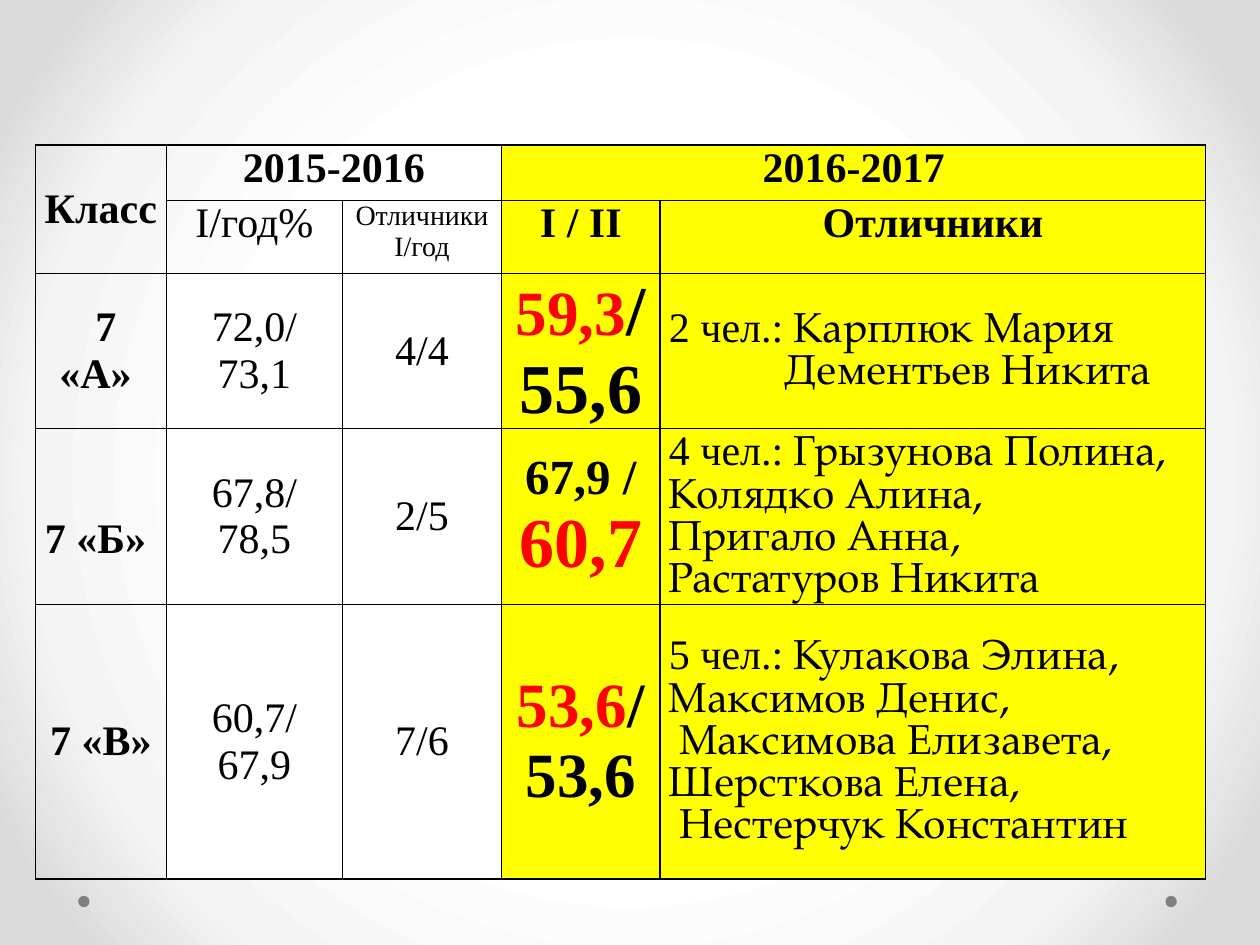
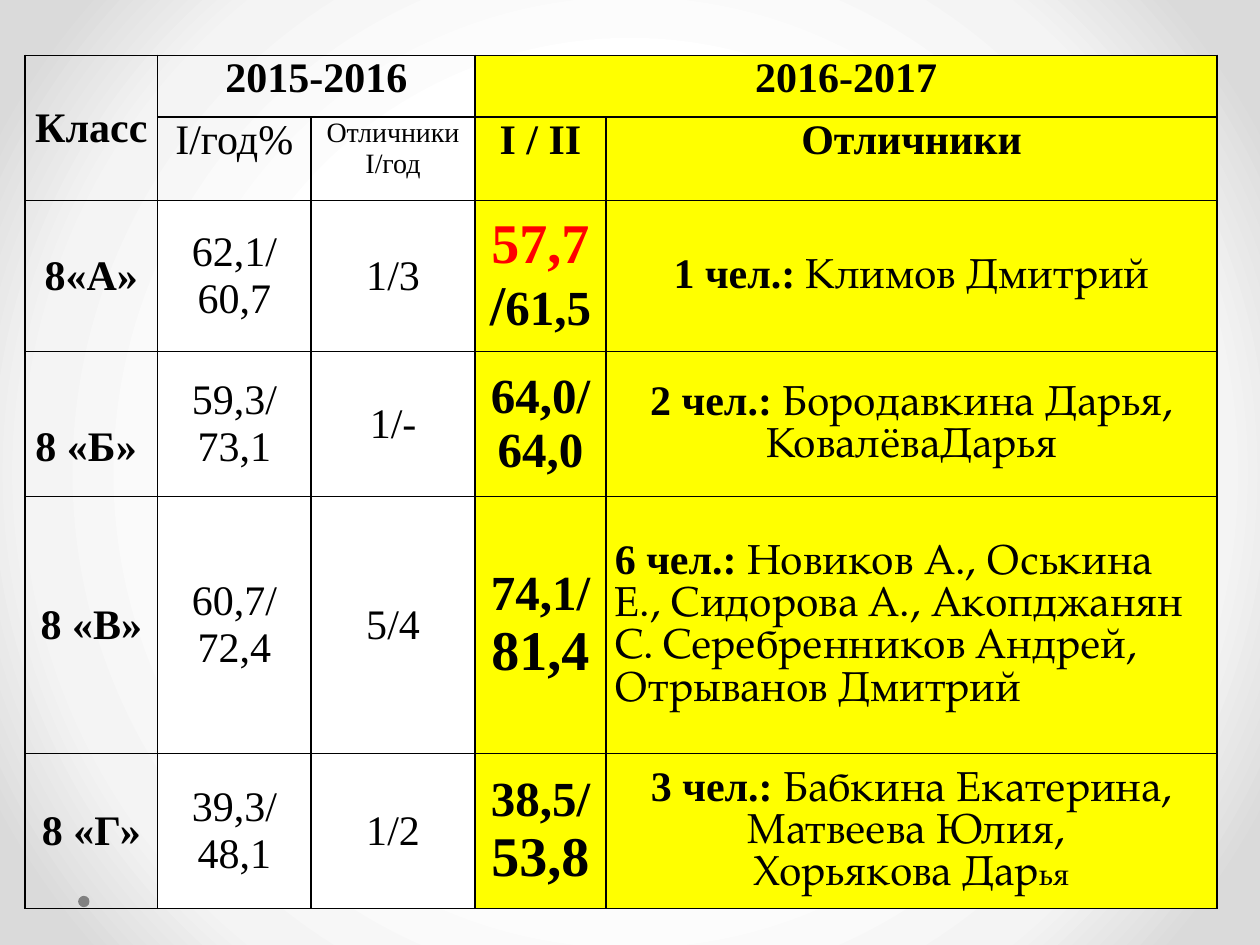
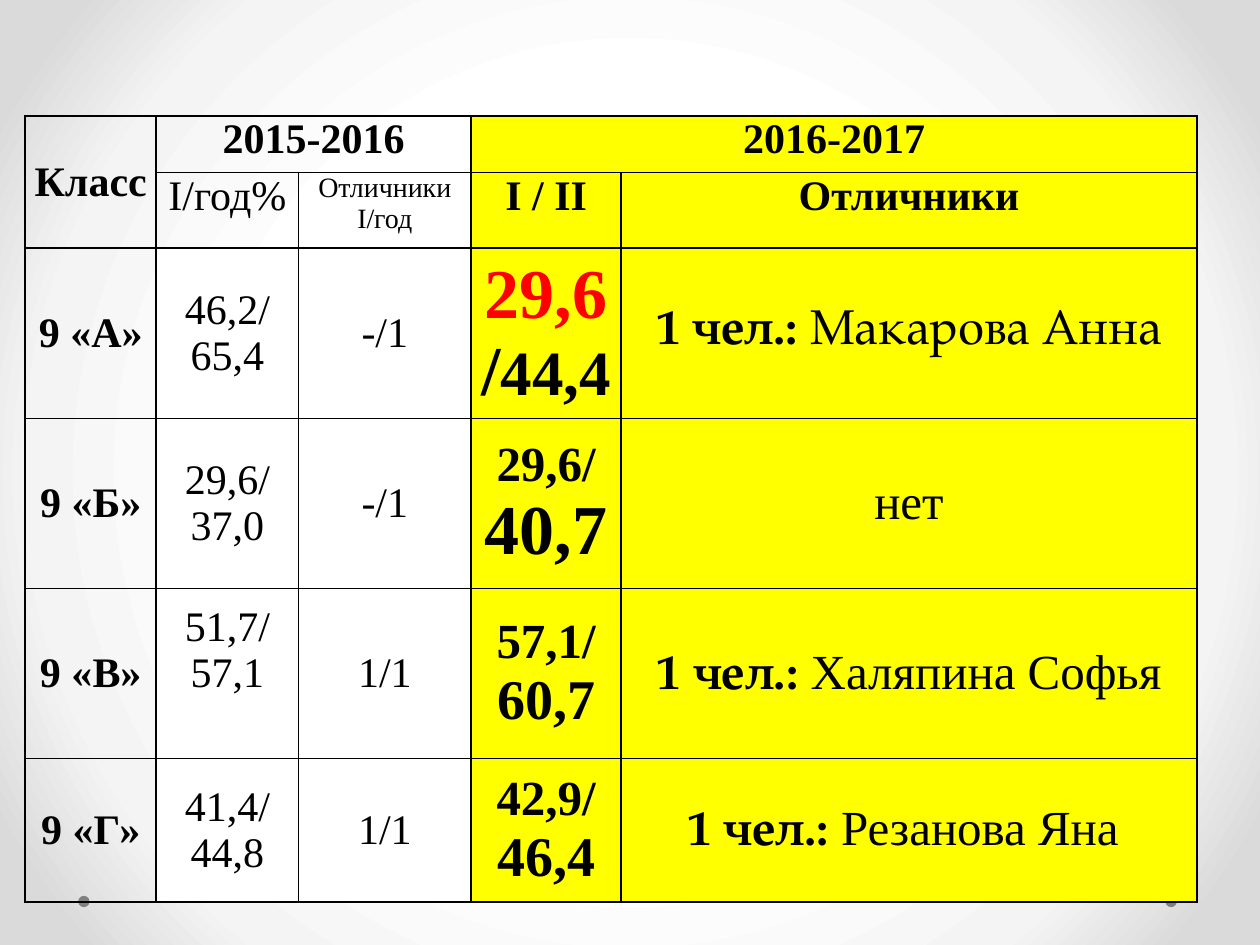
from dataclasses import dataclass

from pptx import Presentation
from pptx.dml.color import RGBColor
from pptx.enum.shapes import MSO_SHAPE
from pptx.enum.text import MSO_ANCHOR, PP_ALIGN
from pptx.oxml import parse_xml
from pptx.oxml.ns import nsdecls
from pptx.util import Inches, Pt


@dataclass(frozen=True)
class Theme:
    serif: str = "Times New Roman"
    names: str = "TeX Gyre Pagella"
    black: str = "000000"
    white: str = "FFFFFF"
    red: str = "FF0000"
    yellow: str = "FFFF00"
    dot: str = "808080"
    backdrop: tuple = ((50, "FFFFFF"), (76, "F4F4F4"), (92, "DADADA"))
    small: int = 16
    tail: int = 18
    text: int = 24
    large: int = 28
    score: int = 32
    score_xl: int = 36
    score_max: int = 40
    border: int = 1
    inset: float = 0.07


T = Theme()
NBSP = chr(160)
LINE = 0.37  # height of one line of table text, inches


@dataclass(frozen=True)
class Run:
    text: str
    size: int = T.text
    bold: bool = False
    color: str = T.black
    font: str = T.serif


@dataclass(frozen=True)
class ClassRow:
    name: str
    rates: tuple
    excellent: str
    scores: list
    pupils: list
    centered: bool = True
    name_drop: float = 0
    rates_lift: float = 0
    last_indent: float = 0


def score(text, size=T.large, color=T.black):
    return Run(text, size, True, color)


def low(text, size):
    return score(text, size, T.red)


def count(text, size=T.text, font=T.serif):
    return Run(text, size, True, font=font)


def pupils(text, size=T.text):
    return Run(text, size, font=T.names)


def rgb(value):
    return RGBColor.from_string(value)


def style_master(prs):
    """Give every slide the radial backdrop and the two footer dots."""
    master = prs.slide_master
    fill = master.background.fill
    fill.solid()
    stops = "".join(
        f'<a:gs pos="{pos * 1000}"><a:srgbClr val="{color}"/></a:gs>'
        for pos, color in T.backdrop)
    gradient = parse_xml(
        f'<a:gradFill {nsdecls("a")} rotWithShape="1"><a:gsLst>{stops}</a:gsLst>'
        '<a:path path="circle"><a:fillToRect l="50000" t="50000" r="50000" b="50000"/>'
        '</a:path></a:gradFill>')
    bg_pr = master.element.cSld.bg.bgPr
    bg_pr.replace(bg_pr[0], gradient)


def add_dots(prs, slide):
    """Draw the footer dots and hand them to the slide master."""
    for left in (9.25, 0.62):
        dot = slide.shapes.add_shape(
            MSO_SHAPE.OVAL, Inches(left), Inches(7.11), Inches(0.09), Inches(0.09))
        dot.shadow.inherit = False
        dot.fill.solid()
        dot.fill.fore_color.rgb = rgb(T.dot)
        dot.line.fill.background()
        prs.slide_master.element.cSld.spTree.append(dot.element)


def format_cell(cell, fill):
    tc_pr = cell._tc.get_or_add_tcPr()
    for side in "LRTB":
        tc_pr.append(parse_xml(
            f'<a:ln{side} {nsdecls("a")} w="{Pt(T.border)}"><a:solidFill>'
            f'<a:srgbClr val="{T.black}"/></a:solidFill></a:ln{side}>'))
    if fill:
        cell.fill.solid()
        cell.fill.fore_color.rgb = rgb(fill)
    else:
        cell.fill.background()
    cell.margin_left = cell.margin_right = Inches(T.inset)
    cell.margin_top = cell.margin_bottom = 0


def write_cell(cell, paragraphs, align=PP_ALIGN.CENTER, anchor=MSO_ANCHOR.MIDDLE):
    """Fill a cell from a list of paragraphs, each a list of runs."""
    cell.vertical_anchor = anchor
    tf = cell.text_frame
    for i, runs in enumerate(paragraphs):
        p = tf.add_paragraph() if i else tf.paragraphs[0]
        p.alignment = align
        for run in runs:
            r = p.add_run()
            r.text = run.text
            r.font.size = Pt(run.size)
            r.font.bold = run.bold
            r.font.name = run.font
            r.font.color.rgb = rgb(run.color)


def write_header(table):
    for start, end in (((0, 0), (1, 0)), ((0, 1), (0, 2)), ((0, 3), (0, 4))):
        table.cell(*start).merge(table.cell(*end))
    write_cell(table.cell(0, 0), [[count("Класс")]])
    headings = {
        (0, 1): [[count("2015-2016")]],
        (0, 3): [[count("2016-2017")]],
        (1, 1): [[Run("I/год%")]],
        (1, 2): [[Run("Отличники", T.small)], [Run("I/год", T.small)]],
        (1, 3): [[count("I / II")]],
        (1, 4): [[count("Отличники")]],
    }
    for place, paragraphs in headings.items():
        write_cell(table.cell(*place), paragraphs, anchor=MSO_ANCHOR.TOP)


def write_class(cells, row):
    name, rates, excellent, scores, names = cells
    write_cell(name, [[count(row.name)]])
    name.margin_top = Inches(row.name_drop)
    write_cell(rates, [[Run(rate)] for rate in row.rates])
    rates.margin_bottom = Inches(row.rates_lift)
    write_cell(excellent, [[Run(row.excellent)]])
    write_cell(scores, row.scores)
    write_cell(names, row.pupils, PP_ALIGN.CENTER if row.centered else PP_ALIGN.LEFT)
    if row.last_indent:
        p_pr = names.text_frame.paragraphs[-1]._p.get_or_add_pPr()
        p_pr.set("marL", str(Inches(row.last_indent)))


def add_results_table(slide, box, widths, heights, rows):
    frame = slide.shapes.add_table(
        len(heights), len(widths), *(Inches(v) for v in box))
    table = frame.table
    table.first_row = table.horz_banding = False
    for col, width in zip(table.columns, widths):
        col.width = Inches(width)
    for line, height in zip(table.rows, heights):
        line.height = Inches(height)
    for i in range(len(heights)):
        for j in range(len(widths)):
            plain = j == 0 or i < 2
            fill = T.yellow if j > 2 else None if plain else T.white
            format_cell(table.cell(i, j), fill)
    write_header(table)
    for i, row in enumerate(rows, start=2):
        write_class([table.cell(i, j) for j in range(len(widths))], row)


GRADE_7 = [
    ClassRow(f"{NBSP}7 «А»{NBSP}", ("72,0/", "73,1"), "4/4",
             [[low("59,3", T.score_xl), score("/55,6", T.score_max)]],
             [[Run("2 чел.: "), pupils("Карплюк Мария")],
              [pupils("Дементьев Никита")]],
             centered=False, last_indent=0.92),
    ClassRow(f"7 «Б»{NBSP}", ("67,8/", "78,5"), "2/5",
             [[score("67,9 /")], [low("60,7", T.score_max)]],
             [[Run("4 чел.: "), pupils("Грызунова Полина, Колядко Алина,")],
              [pupils("Пригало Анна,")],
              [pupils("Растатуров Никита")]],
             centered=False, name_drop=LINE),
    ClassRow("7 «В»", ("60,7/", "67,9"), "7/6",
             [[low("53,6", T.score_xl), score("/53,6", T.score_xl)]],
             [[Run("5 чел.: "), pupils("Кулакова Элина, Максимов Денис,")],
              [pupils(" Максимова Елизавета, Шерсткова Елена,")],
              [pupils(" Нестерчук Константин")]],
             centered=False),
]

GRADE_8 = [
    ClassRow(f"{NBSP}8«А»{NBSP}", ("62,1/", "60,7"), "1/3",
             [[low("57,7", T.score), score("/", T.score), score("61,5")]],
             [[count("1 чел.: "), pupils("Климов Дмитрий")]]),
    ClassRow(f"8 «Б»{NBSP}", ("59,3/", "73,1"), "1/-",
             [[score("64,0/64,0")]],
             [[count("2 чел.: "), pupils("Бородавкина Дарья, КовалёваДарья")]],
             name_drop=LINE),
    ClassRow("8 «В»", ("60,7/", "72,4"), "5/4",
             [[score("74,1/"), score("81,4", T.score)]],
             [[count("6 чел.: "),
               pupils("Новиков А., Оськина Е., Сидорова А., Акопджанян С."),
               pupils(" ", T.tail),
               pupils("Серебренников Андрей, Отрыванов Дмитрий")]],
             centered=False),
    ClassRow("8 «Г»", ("39,3/", "48,1"), "1/2",
             [[score("38,5/"), score("53,8", T.score)]],
             [[count("3 чел.: "), pupils("Бабкина Екатерина, Матвеева Юлия, ")],
              [pupils("Хорьякова Дар"), pupils("ья", T.tail)]]),
]

GRADE_9 = [
    ClassRow("9 «А»", ("46,2/", "65,4"), "-/1",
             [[low("29,6", T.score_max), score("/", T.score_max),
               score("44,4", T.score_xl)]],
             [[count("1 чел.:", T.large, T.names),
               pupils(" Макарова Анна", T.large)]]),
    ClassRow("9 «Б»", ("29,6/", "37,0"), "-/1",
             [[score("29,6/"), score("40,7", T.score_max)]],
             [[Run("нет", T.large)]]),
    ClassRow("9 «В»", ("51,7/", "57,1"), "1/1",
             [[score("57,1/ "), score("60,7", T.score)]],
             [[count("1 чел.: ", T.large, T.names), Run("Халяпина Софья", T.large)]],
             rates_lift=LINE),
    ClassRow("9 «Г»", ("41,4/", "44,8"), "1/1",
             [[score("42,9/ "), score("46,4", T.score)]],
             [[count("1 чел.: ", T.large, T.names), Run("Резанова Яна ", T.large)]]),
]

RESULTS = [
    ((0.28, 1.15, 9.29, 6.13), (1.04, 1.4, 1.26, 1.26, 4.33),
     (0.44, 0.58, 0.8, 0.87, 2.18), GRADE_7),
    ((0.2, 0.44, 9.45, 6.77), (1.05, 1.22, 1.3, 1.04, 4.85),
     (0.49, 0.66, 1.2, 1.15, 2.04, 1.23), GRADE_8),
    ((0.2, 0.92, 9.29, 6.25), (1.04, 1.13, 1.37, 1.19, 4.57),
     (0.45, 0.6, 1.35, 1.35, 1.35, 1.14), GRADE_9),
]


def main():
    prs = Presentation()
    prs.slide_width, prs.slide_height = Inches(10), Inches(7.5)
    style_master(prs)
    blank = prs.slide_layouts.get_by_name("Blank")
    for result in RESULTS:
        add_results_table(prs.slides.add_slide(blank), *result)
    add_dots(prs, prs.slides[0])
    prs.save("out.pptx")


if __name__ == "__main__":
    main()
